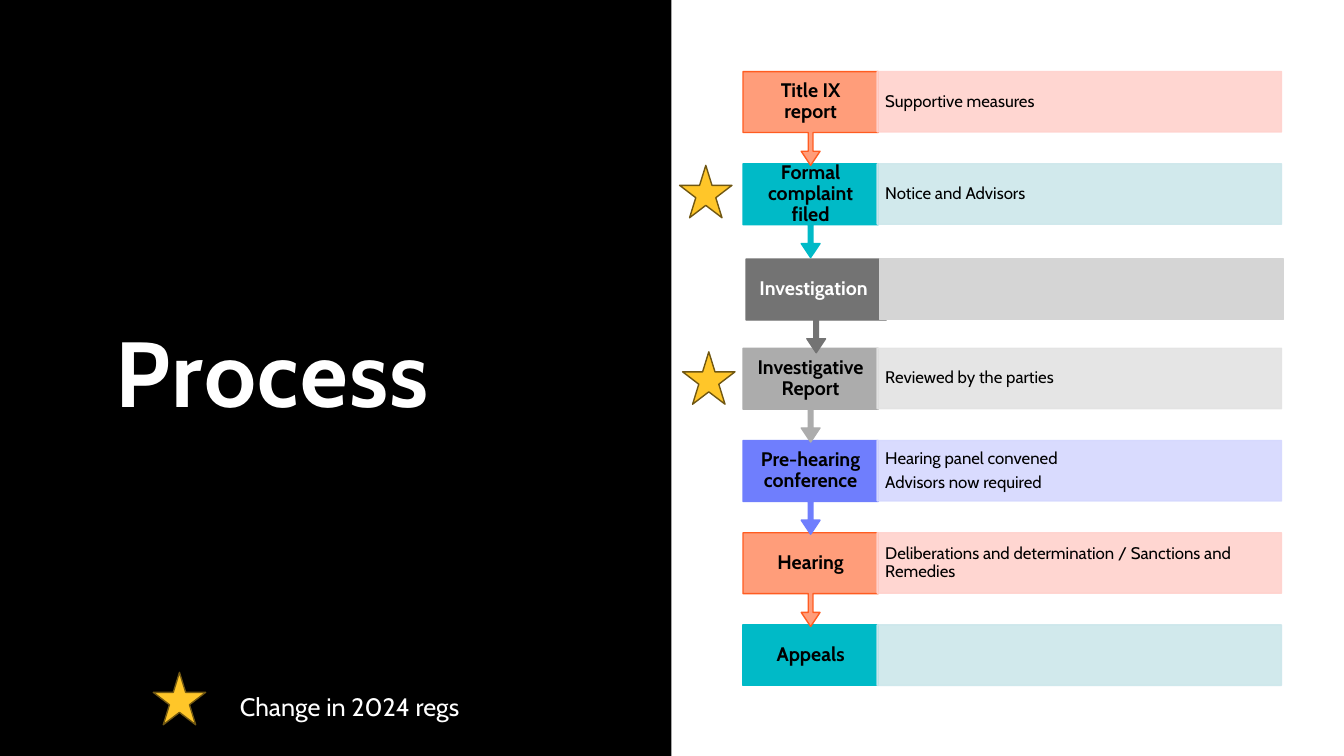
from lxml import etree
from pptx import Presentation
from pptx.dml.color import RGBColor
from pptx.enum.shapes import MSO_SHAPE
from pptx.enum.text import MSO_ANCHOR, PP_ALIGN
from pptx.oxml.ns import qn
from pptx.util import Inches, Pt

RECT, STAR = MSO_SHAPE.RECTANGLE, MSO_SHAPE.STAR_5_POINT
CALLOUT = MSO_SHAPE.UP_ARROW_CALLOUT
TOP, MIDDLE = MSO_ANCHOR.TOP, MSO_ANCHOR.MIDDLE
LEFT, CENTER = PP_ALIGN.LEFT, PP_ALIGN.CENTER

FONT = "Cabin"
COLORS = {
    "black": "000000", "white": "FFFFFF",
    "orange": "FF9D7A", "orange_edge": "FF5C21", "pink": "FFD2CD",
    "teal": "00BAC7", "pale_teal": "CCE7EB",
    "dark_gray": "737373", "mid_gray": "D5D5D5",
    "gray": "ACACAC", "pale_gray": "E3E3E3",
    "blue": "6F7EFD", "pale_blue": "D5D8FE",
    "gold": "FFC629", "gold_edge": "705712",
}

# label, details, label fill, label edge, detail fill
STEPS = [
    ("Title IX report", ["Supportive measures"], "orange", "orange_edge", "pink"),
    ("Formal complaint filed", ["Notice and Advisors"], "teal", "teal", "pale_teal"),
    ("Investigation", [], "dark_gray", "dark_gray", "mid_gray"),
    ("Investigative Report", ["Reviewed by the parties"], "gray", "gray", "pale_gray"),
    ("Pre-hearing conference", ["Hearing panel convened", "Advisors now required"],
     "blue", "blue", "pale_blue"),
    ("Hearing", ["Deliberations and determination / Sanctions and Remedies"],
     "orange", "orange_edge", "pink"),
    ("Appeals", [], "teal", "teal", "pale_teal"),
]
FLOW_TOP, STEP_PITCH = 0.71, 0.915
LABEL_LEFT, LABEL_W, DETAIL_LEFT, DETAIL_W = 7.37, 1.34, 8.7, 4.01
BOX_H, CALLOUT_H = 0.6, 0.93
STARS = [(6.74, 1.64), (6.77, 3.49), (1.52, 6.67)]


def rgb(name):
    return RGBColor.from_string(COLORS[name])


def add_box(s, kind, x, y, w, h, fill, edge=None, alpha=100):
    """Add a preset shape; alpha is the opacity of fill and line in percent."""
    sp = s.shapes.add_shape(kind, Inches(x), Inches(y), Inches(w), Inches(h))
    sp.shadow.inherit = False
    sp.fill.solid()
    sp.fill.fore_color.rgb = rgb(fill)
    if edge:
        sp.line.color.rgb = rgb(edge)
        sp.line.width = Pt(1)
    else:
        sp.line.fill.background()
    if alpha < 100:
        for color in sp._element.spPr.iter(qn("a:srgbClr")):
            etree.SubElement(color, qn("a:alpha")).set("val", str(alpha * 1000))
    return sp


def add_text(s, lines, x, y, w, h, size, color="black", bold=False, align=LEFT,
             anchor=MIDDLE, insets=(0.1, 0.05, 0.1, 0.05), spacing=0.9, after=0,
             tracking=None):
    tf = s.shapes.add_textbox(Inches(x), Inches(y), Inches(w), Inches(h)).text_frame
    tf.word_wrap = True
    tf.vertical_anchor = anchor
    (tf.margin_left, tf.margin_top,
     tf.margin_right, tf.margin_bottom) = map(Inches, insets)
    for i, line in enumerate(lines):
        p = tf.add_paragraph() if i else tf.paragraphs[0]
        p.alignment = align
        p.line_spacing = spacing
        p.space_after = Pt(after)
        r = p.add_run()
        r.text = line
        r.font.name, r.font.size, r.font.bold = FONT, Pt(size), bold
        r.font.color.rgb = rgb(color)
        if tracking:
            r._r.get_or_add_rPr().set("spc", str(round(tracking * 100)))


def add_callout(s, x, y, w, fill, edge):
    """Add a box with an arrow pointing down to the next step."""
    sp = add_box(s, CALLOUT, x, y, w, CALLOUT_H, fill, edge)
    sp.rotation = 180
    for i, value in enumerate((0.05, 0.1, 0.15, 0.65)):
        sp.adjustments[i] = value


def add_step(s, index):
    label, details, fill, edge, pale = STEPS[index]
    y = FLOW_TOP + index * STEP_PITCH
    x, w, detail_x, alpha, color = LABEL_LEFT, LABEL_W, DETAIL_LEFT, 90, "black"
    if label == "Investigation":  # this step sits slightly off the grid
        x, y, w, detail_x, alpha, color = 7.4, 2.57, 1.39, 8.72, 100, "white"
    if index < len(STEPS) - 1:
        add_callout(s, x, y, w, fill, edge)
    else:
        add_box(s, RECT, x, y, w, BOX_H, fill, edge)
    add_box(s, RECT, detail_x, y, DETAIL_W, BOX_H, pale, pale, alpha)
    add_text(s, [label], x, y, LABEL_W, BOX_H, 14, color=color, bold=True,
             align=CENTER, insets=(0.1, 0.11, 0.1, 0.11), after=4.9)
    if details:
        add_text(s, details, detail_x, y, DETAIL_W, BOX_H, 12,
                 insets=(0.08, 0.17, 0.08, 0.17), after=4.2)


def main():
    prs = Presentation()
    prs.slide_width, prs.slide_height = Inches(13.33), Inches(7.5)
    s = prs.slides.add_slide(prs.slide_layouts[6])
    add_box(s, RECT, 0, 0, 6.66, 7.5, "black")
    add_text(s, ["Process"], 1.05, 0.7, 5.06, 6.09, 66, color="white", bold=True,
             tracking=1.2)
    for index in reversed(range(len(STEPS))):  # each arrow tip overlaps the next step
        add_step(s, index)
    for x, y in STARS:
        add_box(s, STAR, x, y, 0.52, 0.52, "gold", "gold_edge")
    add_text(s, ["Change in 2024 regs"], 2.28, 6.81, 2.79, 0.4, 18, color="white",
             anchor=TOP, spacing=1.0)
    prs.save("out.pptx")


if __name__ == "__main__":
    main()
